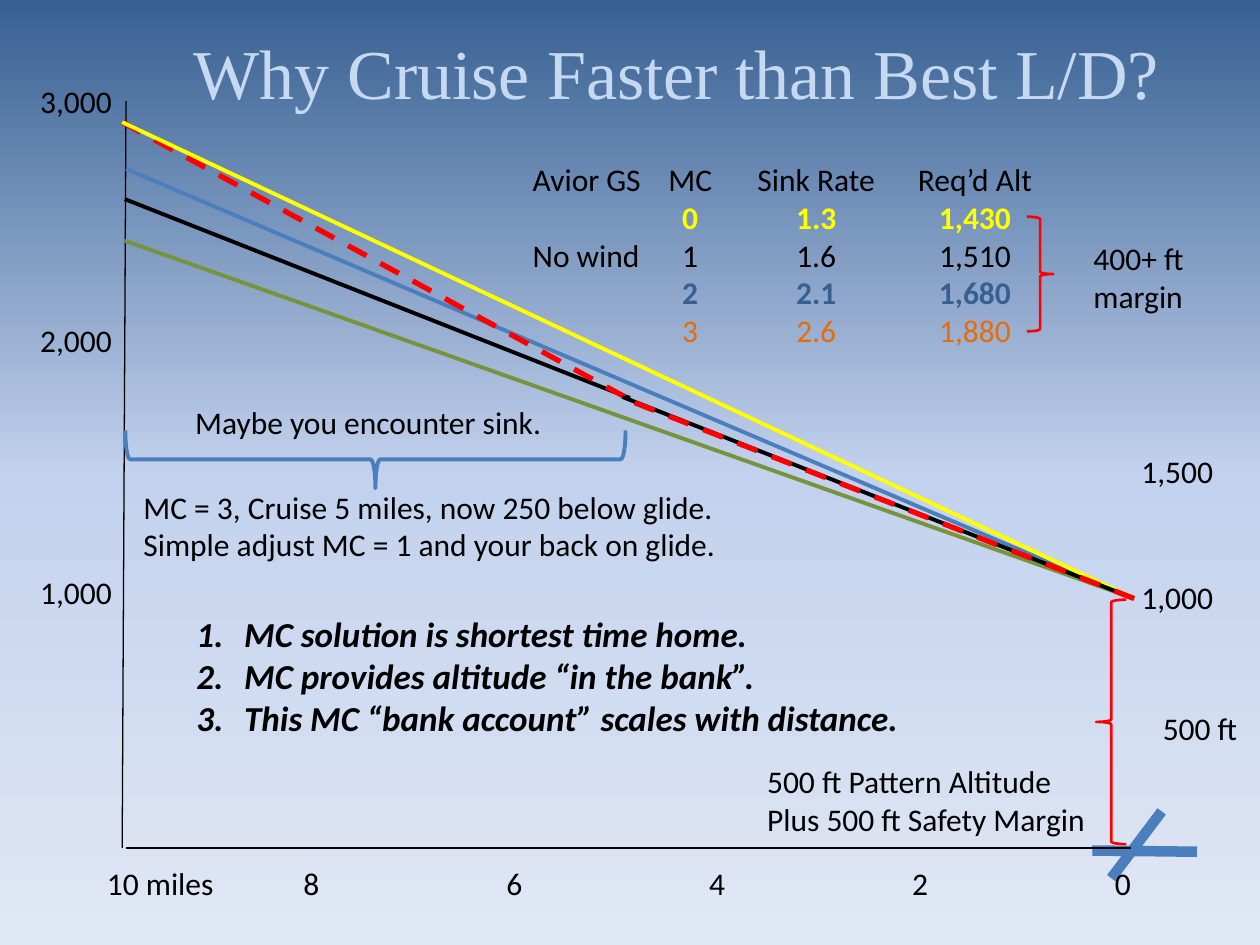
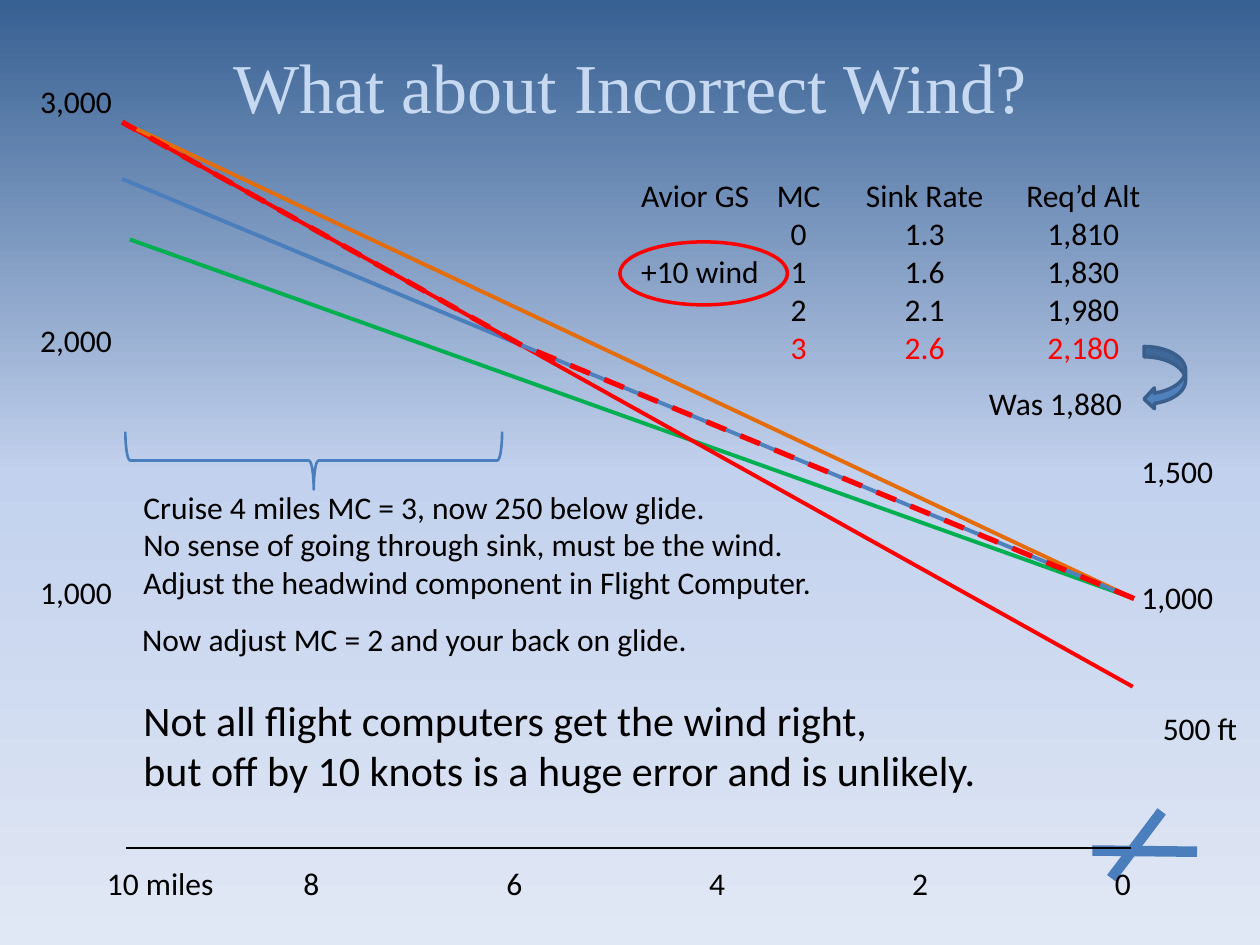
from lxml.etree import SubElement
from pptx import Presentation
from pptx.dml.color import RGBColor
from pptx.enum.dml import MSO_LINE
from pptx.enum.shapes import MSO_CONNECTOR, MSO_SHAPE
from pptx.enum.text import MSO_ANCHOR, MSO_AUTO_SIZE, PP_ALIGN
from pptx.oxml.ns import qn
from pptx.util import Inches, Pt

BLACK = RGBColor(0x00, 0x00, 0x00)
NAVY = RGBColor(0x37, 0x60, 0x92)
SKY = RGBColor(0xC2, 0xD1, 0xED)
HAZE = RGBColor(0xE1, 0xE8, 0xF5)
PALE_BLUE = RGBColor(0xC6, 0xD9, 0xF1)
BLUE = RGBColor(0x4B, 0x7E, 0xBC)
ARROW_BLUE = RGBColor(0x4F, 0x81, 0xBD)
ARROW_EDGE = RGBColor(0x3A, 0x5F, 0x8C)
RED = RGBColor(0xFF, 0x00, 0x00)
YELLOW = RGBColor(0xFF, 0xFF, 0x00)
ORANGE = RGBColor(0xE4, 0x6C, 0x0A)
OLIVE = RGBColor(0x77, 0x93, 0x3C)
GREEN = RGBColor(0x00, 0xB0, 0x50)

COLUMNS, ROWS = 100, 75
HOME = (90, 47.5)      # where every planned glide ends
START = (9.7, 9.7)     # highest point of the glide, ten miles out
TAB_STOPS = (1.25, 2.25, 3.51)


class GlideDeck:
    """Style, grid and current page of the glide slides."""

    def __init__(self):
        self.deck = Presentation()
        self.deck.slide_width = Inches(10)
        self.deck.slide_height = Inches(7.5)
        self.page = None

    def x(self, columns):
        return round(self.deck.slide_width * columns / COLUMNS)

    def y(self, rows):
        return round(self.deck.slide_height * rows / ROWS)

    def area(self, left, top, width, height):
        return self.x(left), self.y(top), self.x(width), self.y(height)

    def new_page(self, title, left, top):
        self.page = self.deck.slides.add_slide(self.deck.slide_layouts[6])
        self.sky_background()
        box = self.text([title], left, top, 90, 12.5, size=40,
                        color=PALE_BLUE, font="Times New Roman", wrap=True)
        box.text_frame.vertical_anchor = MSO_ANCHOR.MIDDLE
        box.text_frame.paragraphs[0].alignment = PP_ALIGN.CENTER
        self.airfield_and_scales()

    def sky_background(self):
        fill = self.page.background.fill
        fill.gradient()
        fill.gradient_angle = 270
        stops = next(self.page.element.iter(qn("a:gsLst")))
        for stop in list(stops):
            stops.remove(stop)
        for percent, color in ((0, NAVY), (50, SKY), (100, HAZE)):
            stop = SubElement(stops, qn("a:gs"), pos=str(percent * 1000))
            SubElement(stop, qn("a:srgbClr"), val=str(color))

    def text(self, lines, left, top, width, height, size=18, color=BLACK,
             font="Calibri", wrap=False, bold=False, italic=False):
        box = self.page.shapes.add_textbox(*self.area(left, top, width, height))
        frame = box.text_frame
        frame.word_wrap = wrap
        frame.auto_size = MSO_AUTO_SIZE.NONE if wrap else MSO_AUTO_SIZE.SHAPE_TO_FIT_TEXT
        for index, line in enumerate(lines):
            para = frame.add_paragraph() if index else frame.paragraphs[0]
            para.text = line
            para.font.name = font
            para.font.size = Pt(size)
            para.font.color.rgb = color
            para.font.bold = bold
            para.font.italic = italic
        return box

    def numbered(self, lines, *place, **style):
        box = self.text(lines, *place, **style)
        for para in box.text_frame.paragraphs:
            properties = para._p.get_or_add_pPr()
            properties.set("marL", str(Inches(0.38)))
            properties.set("indent", str(-Inches(0.38)))
            number = SubElement(properties, qn("a:buAutoNum"), type="arabicPeriod")
            properties.insert(0, number)

    def sink_table(self, rows, left, top):
        """Tabbed table; each row is (cells, colour, bold)."""
        lines = ["\t".join(cells) for cells, _, _ in rows]
        box = self.text(lines, left, top, 44, 16.2)
        for para, (_, color, bold) in zip(box.text_frame.paragraphs, rows):
            para.font.color.rgb = color
            para.font.bold = bold
            properties = para._p.get_or_add_pPr()
            tabs = SubElement(properties, qn("a:tabLst"))
            for stop in TAB_STOPS:
                SubElement(tabs, qn("a:tab"), pos=str(Inches(stop)), algn="ctr")
            properties.insert(0, tabs)

    def line(self, start, end, color, weight=2.25, dashed=False):
        connector = self.page.shapes.add_connector(
            MSO_CONNECTOR.STRAIGHT, self.x(start[0]), self.y(start[1]),
            self.x(end[0]), self.y(end[1]))
        connector.line.color.rgb = color
        connector.line.width = Pt(weight)
        if dashed:
            connector.line.dash_style = MSO_LINE.DASH
        SubElement(connector._element.spPr, qn("a:effectLst"))

    def flown(self, start, end):
        self.line(start, end, RED, 3, dashed=True)

    def shape(self, kind, left, top, width, height, color, weight=1.5,
              fill=None, rotation=0):
        shape = self.page.shapes.add_shape(kind, *self.area(left, top, width, height))
        shape.shadow.inherit = False
        shape.rotation = rotation
        shape.line.color.rgb = color
        shape.line.width = Pt(weight)
        if fill is None:
            shape.fill.background()
        else:
            shape.fill.solid()
            shape.fill.fore_color.rgb = fill

    def airfield_and_scales(self):
        # Crossed runways at the destination
        self.line((86.7, 67.5), (95, 67.6), BLUE, 6)
        self.line((88.2, 69.7), (92.2, 64.4), BLUE, 6)
        # Distance scale
        self.line((89.8, 67.3), (10, 67.3), BLACK, 1)
        self.text(["10 miles"], 7.5, 68.1, 16.9, 4)
        for step, miles in enumerate("86420"):
            self.text([miles], 23.1 + 16.1 * step, 68.1, 5.3, 4)
        # Altitude scales
        for label, top in (("3,000", 6), ("2,000", 25), ("1,000", 45)):
            self.text([label], 2.2, top, 7.8, 4)
        for label, left, top in (("1,500", 89.6, 35.4), ("1,000", 89.6, 45.4),
                                 ("500 ft", 91.3, 55.8)):
            self.text([label], left, top, 8.2, 4)


HEADINGS = (("Avior GS", "MC", "Sink Rate", "Req’d Alt", ""), BLACK, False)


def cruise_page(deck):
    deck.new_page("Why Cruise Faster than Best L/D?", 8.7, -0.6)

    # Glide paths, one per MC setting
    deck.line((9.7, 67.3), (10, 8), BLACK, 0.75)
    deck.line((50, 31.6), (9.9, 15.8), BLACK)
    deck.line(HOME, (9.9, 19.1), OLIVE)
    deck.line(HOME, (10, 13.4), BLUE)
    deck.flown((49.6, 31.5), START)
    deck.line(HOME, START, YELLOW)
    deck.line(HOME, (49.4, 31.5), BLACK)
    deck.flown(HOME, (49.7, 31.7))

    # Required altitude and its margin
    deck.sink_table([
        HEADINGS,
        (("", "0", "1.3", "1,430"), YELLOW, True),
        (("No wind", "1", "1.6", "1,510"), BLACK, False),
        (("", "2", "2.1", "1,680"), NAVY, True),
        (("", "3", "2.6", "1,880"), ORANGE, False),
    ], 41.3, 12.2)
    deck.shape(MSO_SHAPE.RIGHT_BRACE, 81.5, 17.2, 2.1, 9.1, RED)
    deck.text(["400+ ft", "margin"], 85.8, 18.5, 9.9, 7.1)

    # Sink on the first five miles
    deck.shape(MSO_SHAPE.LEFT_BRACE, 27.5, 16.6, 4.6, 39.7, BLUE, 2.25, rotation=270)
    deck.text(["Maybe you encounter sink."], 14.5, 31.5, 29.8, 4)
    deck.text(["MC = 3, Cruise 5 miles, now 250 below glide.",
               "Simple adjust MC = 1 and your back on glide."], 10.4, 38.2, 48, 7.1)

    # Reserve over the airfield
    deck.shape(MSO_SHAPE.LEFT_BRACE, 87, 47.6, 2.4, 19.4, RED)
    deck.text(["500 ft Pattern Altitude", "Plus 500 ft Safety Margin"],
              59.9, 60, 27.6, 7.1)

    # Conclusions
    deck.numbered(["MC solution is shortest time home.",
                   "MC provides altitude “in the bank”.",
                   "This MC “bank account” scales with distance."],
                  14.6, 48.1, 58, 11.1, size=20, bold=True, italic=True)


def wind_page(deck):
    deck.new_page("What about Incorrect Wind?", 5, 0.5)

    # Glide paths, planned and flown
    turn = (41.4, 27.4)
    deck.line(HOME, (10.3, 19), GREEN)
    deck.line(turn, (9.7, 14.2), BLUE)
    deck.line((89.9, 54.5), START, RED)
    deck.line(HOME, START, ORANGE)
    deck.flown(turn, START)
    deck.line(HOME, turn, ARROW_BLUE)
    deck.flown(HOME, turn)

    # Required altitude with the wrong wind
    deck.sink_table([
        HEADINGS,
        (("", "0", "1.3", "1,810"), BLACK, False),
        (("+10 wind", "1", "1.6", "1,830"), BLACK, False),
        (("", "2", "2.1", "1,980"), BLACK, False),
        (("", "3", "2.6", "2,180"), RED, False),
    ], 49.9, 13.5)
    deck.shape(MSO_SHAPE.OVAL, 49.2, 19.2, 13.3, 5, RED, 2)
    deck.text(["Was 1,880"], 77.5, 30, 12.7, 4)
    deck.shape(MSO_SHAPE.CURVED_LEFT_ARROW, 90.8, 27.5, 3.3, 5,
               ARROW_EDGE, 2, fill=ARROW_BLUE)

    # What to do after four miles
    deck.shape(MSO_SHAPE.LEFT_BRACE, 22.6, 21.6, 4.6, 29.9, BLUE, rotation=270)
    deck.text(["Cruise 4 miles MC = 3, now 250 below glide.",
               "No sense of going through sink, must be the wind.",
               "Adjust the headwind component in Flight Computer."],
              10.4, 38.2, 55.7, 10.1)
    deck.text(["Now adjust MC = 2 and your back on glide."], 10.3, 48.7, 45.8, 4)
    deck.text(["Not all flight computers get the wind right,",
               "but off by 10 knots is a huge error and is unlikely."],
              10.4, 54.6, 68.1, 9.1, size=24)


def main():
    deck = GlideDeck()
    cruise_page(deck)
    wind_page(deck)
    deck.deck.save("out.pptx")


if __name__ == "__main__":
    main()
